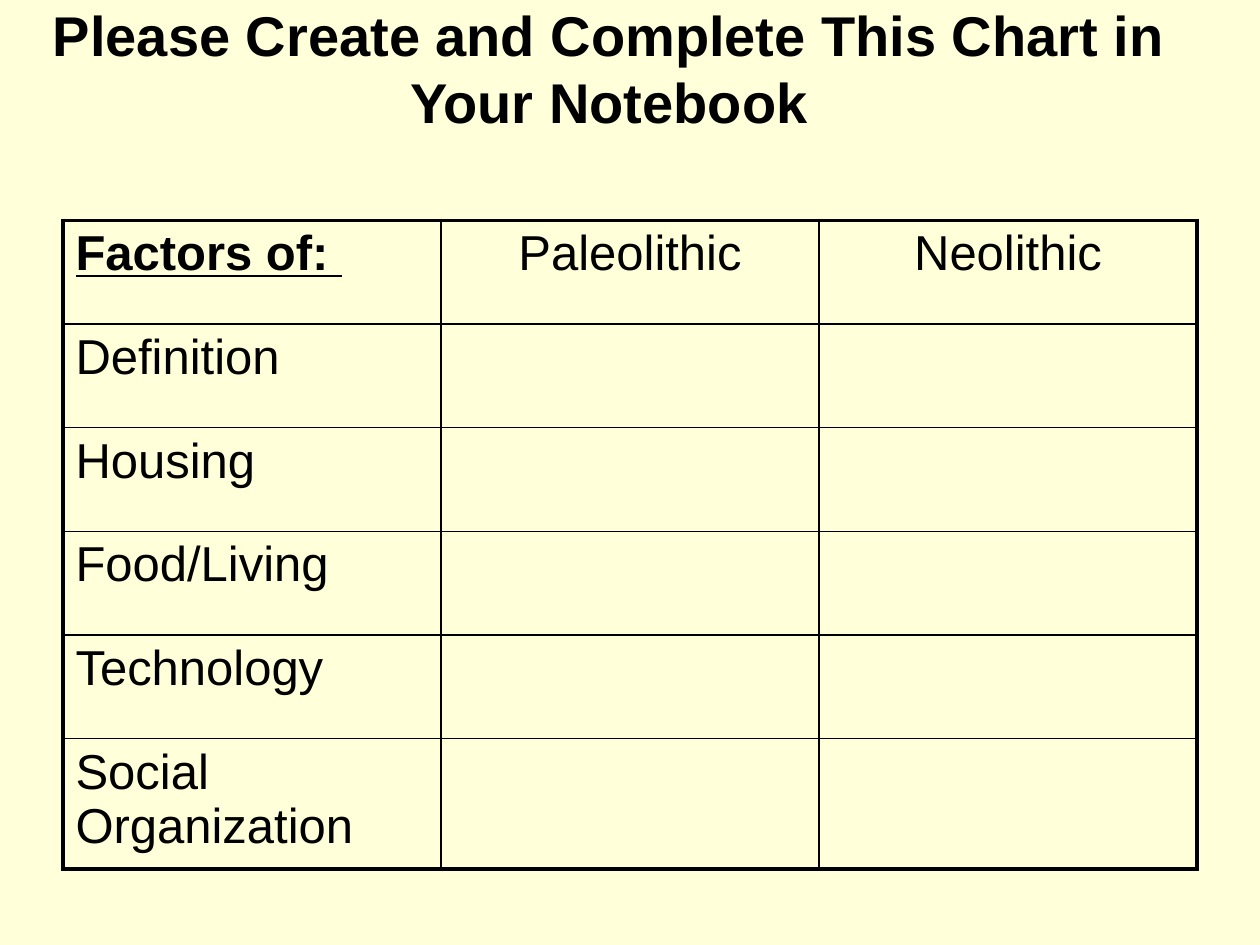
from typing import NamedTuple

from lxml import etree
from pptx import Presentation, util as u
from pptx.dml.color import RGBColor
from pptx.enum import text
from pptx.oxml import ns

COLORS = {"background": "FFFFD9", "ink": "000000"}
FONT = "Arial"
THIN, THICK = 1, 2.25
COL_WIDTH = u.Cm(7.62)
ROW_HEIGHT = u.Cm(2.09)
LAST_ROW_HEIGHT = u.Cm(2.46)


class Entry(NamedTuple):
    words: str
    align: text.PP_ALIGN = text.PP_ALIGN.LEFT
    heading: bool = False


HEADER = [
    Entry("Factors of: ", heading=True),
    Entry("Paleolithic", text.PP_ALIGN.CENTER),
    Entry("Neolithic", text.PP_ALIGN.CENTER),
]
FACTORS = ["Definition", "Housing", "Food/Living", "Technology", "Social Organization"]
ROWS = [HEADER] + [[Entry(name)] for name in FACTORS]


def write(tf, words: str, *, size: float, align=text.PP_ALIGN.LEFT,
          bold: bool = False, underline: bool = False) -> None:
    p = tf.paragraphs[0]
    p.alignment = align
    r = p.add_run()
    r.text = words
    r.font.name = FONT
    r.font.size = u.Pt(size)
    r.font.bold = bold
    r.font.underline = underline
    r.font.color.rgb = RGBColor.from_string(COLORS["ink"])


def set_borders(cell, **widths: float) -> None:
    """Draw cell borders; keys are L, R, T, B in schema order, widths in points."""
    tc_pr = cell._tc.get_or_add_tcPr()
    for side, width in widths.items():
        ln = etree.SubElement(tc_pr, ns.qn(f"a:ln{side}"), w=str(int(u.Pt(width))))
        fill = etree.SubElement(ln, ns.qn("a:solidFill"))
        etree.SubElement(fill, ns.qn("a:srgbClr"), val=COLORS["ink"])


def add_title(s, words: str) -> None:
    sp = s.shapes.add_textbox(u.Cm(0.43), u.Cm(0), u.Cm(23.7), u.Cm(2.74))
    tf = sp.text_frame
    tf.word_wrap = True
    tf.vertical_anchor = text.MSO_ANCHOR.MIDDLE
    write(tf, words, size=32, align=text.PP_ALIGN.CENTER, bold=True)


def add_factor_table(s, rows: list[list[Entry]]) -> None:
    n_rows, n_cols = len(rows), len(HEADER)
    height = ROW_HEIGHT * (n_rows - 1) + LAST_ROW_HEIGHT
    table = s.shapes.add_table(n_rows, n_cols, u.Cm(1.27), u.Cm(4.44),
                               COL_WIDTH * n_cols, height).table
    table.first_row = table.horz_banding = False
    for col in table.columns:
        col.width = COL_WIDTH
    for i, entries in enumerate(rows):
        last_row = i == n_rows - 1
        table.rows[i].height = LAST_ROW_HEIGHT if last_row else ROW_HEIGHT
        for j in range(n_cols):
            cell = table.cell(i, j)
            set_borders(cell,
                        L=THICK if j == 0 else THIN,
                        R=THICK if j == n_cols - 1 else THIN,
                        T=THICK if i == 0 else THIN,
                        B=THICK if last_row else THIN)
            cell.fill.background()
            if j < len(entries):
                entry = entries[j]
                write(cell.text_frame, entry.words, size=28, align=entry.align,
                      bold=entry.heading, underline=entry.heading)


def main() -> None:
    prs = Presentation()
    prs.slide_width, prs.slide_height = u.Cm(25.4), u.Cm(19.05)
    s = prs.slides.add_slide(prs.slide_layouts[6])
    s.background.fill.solid()
    s.background.fill.fore_color.rgb = RGBColor.from_string(COLORS["background"])
    add_title(s, "Please Create and Complete This Chart in Your Notebook")
    add_factor_table(s, ROWS)
    prs.save("out.pptx")


if __name__ == "__main__":
    main()
